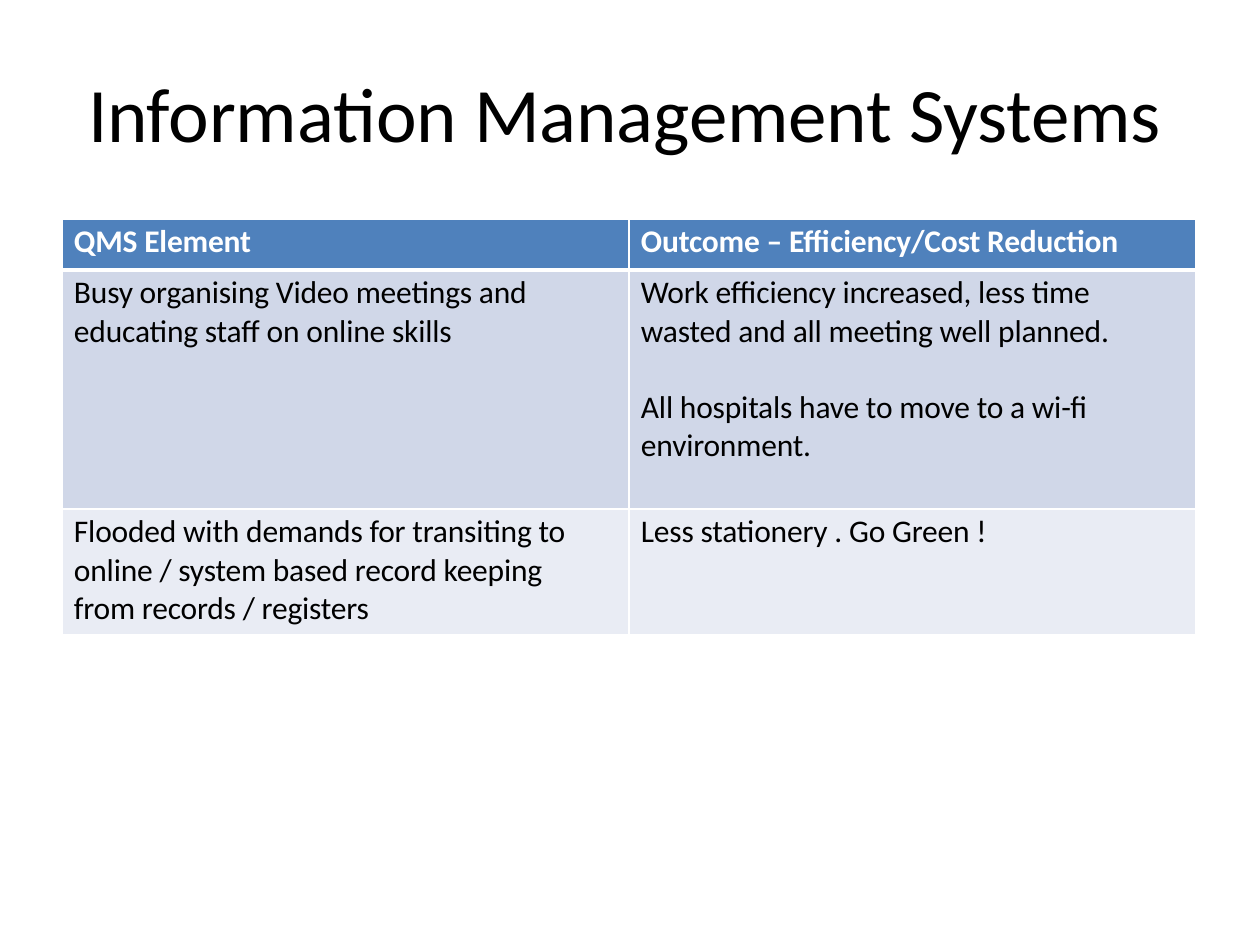
from lxml import etree
from pptx import Presentation
from pptx import util as u
from pptx.dml.color import RGBColor
from pptx.enum import text
from pptx.oxml import ns

PX = 914400 / 126
FONT = "Calibri"
HEADER_FILL, FIRST_FILL, SECOND_FILL = "4F81BC", "D0D7E8", "E9ECF4"
ROWS = [
    (51, HEADER_FILL, ["QMS Element"], ["Outcome – Efficiency/Cost Reduction"]),
    (239, FIRST_FILL,
     ["Busy organising Video meetings and\veducating staff on online skills"],
     ["Work efficiency increased, less time\vwasted and all meeting well planned.",
      "All hospitals have to move to a wi-fi\venvironment."]),
    (126, SECOND_FILL,
     ["Flooded with demands for transiting to\vonline / system based record keeping\v"
      "from records / registers"],
     ["Less stationery . Go Green !"]),
]


def px(length):
    return u.Emu(round(length * PX))


def color(code):
    return RGBColor.from_string(code)


def style_para(para, size, code, bold=False):
    para.alignment = text.PP_ALIGN.LEFT
    for span in para.runs:
        span.font.name = FONT
        span.font.size = u.Pt(size)
        span.font.bold = bold
        span.font.color.rgb = color(code)
        span._r.get_or_add_rPr().set("spc", "-10")


def add_borders(cell, widths):
    props = cell._tc.get_or_add_tcPr()
    for index, (side, width) in enumerate(widths.items()):
        line = etree.Element(ns.qn(f"a:ln{side}"), w=str(u.Pt(width)))
        fill = etree.SubElement(line, ns.qn("a:solidFill"))
        etree.SubElement(fill, ns.qn("a:srgbClr"), val="FFFFFF")
        props.insert(index, line)


def fill_cell(cell, lines, fill, is_header):
    cell.fill.solid()
    cell.fill.fore_color.rgb = color(fill)
    cell.margin_left = px(12)
    cell.margin_right = cell.margin_bottom = 0
    cell.margin_top = px(4)
    cell.vertical_anchor = text.MSO_ANCHOR.TOP
    frame = cell.text_frame
    frame.text = "\n".join(lines)
    for index, para in enumerate(frame.paragraphs):
        style_para(para, 18, "FFFFFF" if is_header else "000000", is_header)
        if index:
            para.space_before = u.Pt(21.5)


def add_title(page, left, top, width, height):
    box = page.shapes.title
    box.left, box.top, box.width, box.height = map(px, (left, top, width, height))
    frame = box.text_frame
    frame.text = "Information Management Systems"
    frame.word_wrap = True
    frame.auto_size = text.MSO_AUTO_SIZE.NONE
    frame.vertical_anchor = text.MSO_ANCHOR.TOP
    frame.margin_left = frame.margin_right = frame.margin_bottom = 0
    frame.margin_top = px(2)
    style_para(frame.paragraphs[0], 44, "000000")


def add_outcomes(page, left, top, width):
    height = sum(row[0] for row in ROWS)
    table = page.shapes.add_table(len(ROWS), 2, *map(px, (left, top, width, height))).table
    for column in table.columns:
        column.width = px(width / 2)
    for index, (row_height, fill, *entries) in enumerate(ROWS):
        table.rows[index].height = px(row_height)
        widths = {"L": 1, "R": 1, "T": 3 if index == 1 else 1, "B": 3 if index == 0 else 1}
        for cell, lines in zip(table.rows[index].cells, entries):
            fill_cell(cell, lines, fill, index == 0)
            add_borders(cell, widths)


def main():
    deck = Presentation()
    deck.slide_width, deck.slide_height = px(1260), px(945)
    page = deck.slides.add_slide(deck.slide_layouts.get_by_name("Title Only"))
    add_title(page, 88, 64, 1084, 96)
    add_outcomes(page, 62, 219, 1134)
    deck.save("out.pptx")


if __name__ == "__main__":
    main()
